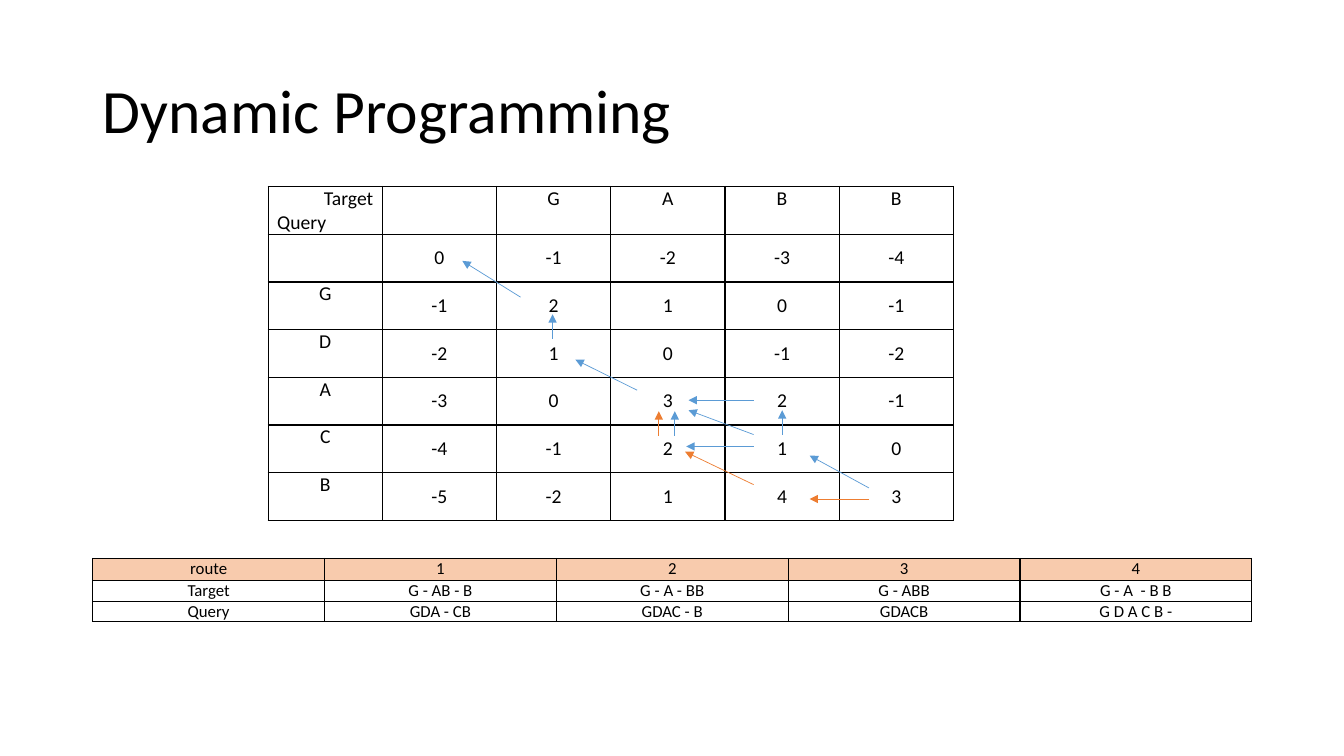
from lxml import etree
from pptx import Presentation
from pptx.dml.color import RGBColor
from pptx.enum.shapes import MSO_CONNECTOR
from pptx.enum.text import MSO_ANCHOR, PP_ALIGN
from pptx.oxml.ns import qn
from pptx.util import Inches, Pt

LEFT, CENTER, RIGHT = PP_ALIGN.LEFT, PP_ALIGN.CENTER, PP_ALIGN.RIGHT
TOP, MIDDLE = MSO_ANCHOR.TOP, MSO_ANCHOR.MIDDLE
STRAIGHT = MSO_CONNECTOR.STRAIGHT
BLACK, BLUE, ORANGE, PEACH = "000000", "5B9BD5", "ED7D31", "F8CBAD"


def rgb(value):
    return RGBColor.from_string(value)


class Deck:
    """Style and current slide; page lengths are percentages of the slide."""

    font = "Calibri"

    def __init__(self):
        self.prs = Presentation()
        self.prs.slide_width, self.prs.slide_height = Inches(13.33), Inches(7.5)
        self.s = self.prs.slides.add_slide(self.prs.slide_layouts[5])

    def x(self, share):
        return round(self.prs.slide_width * share / 100)

    def y(self, share):
        return round(self.prs.slide_height * share / 100)

    def style(self, p, size, align):
        p.alignment = align
        p.font.name, p.font.size = self.font, Pt(size)
        p.font.color.rgb = rgb(BLACK)

    def title(self, text, left, top, width, height):
        sp = self.s.shapes.title
        sp.left, sp.top = self.x(left), self.y(top)
        sp.width, sp.height = self.x(width), self.y(height)
        tf = sp.text_frame
        tf.text, tf.vertical_anchor = text, MIDDLE
        p = tf.paragraphs[0]
        self.style(p, 44, LEFT)
        p.line_spacing = 0.9

    def border(self, cell):
        tcPr = cell._tc.get_or_add_tcPr()
        for i, side in enumerate(("a:lnL", "a:lnR", "a:lnT", "a:lnB")):
            ln = etree.Element(qn(side), w=str(Pt(1)))
            fill = etree.SubElement(ln, qn("a:solidFill"))
            etree.SubElement(fill, qn("a:srgbClr"), val=BLACK)
            tcPr.insert(i, ln)

    def table(self, rows, left, top, width, heights, size, inset):
        frame = self.s.shapes.add_table(
            len(rows), len(rows[0]), self.x(left), self.y(top),
            self.x(width), self.y(sum(heights)))
        table = frame.table
        table.first_row = table.horz_banding = False
        for row, height in zip(table.rows, heights):
            row.height = self.y(height)
        for r, row in enumerate(rows):
            for c, text in enumerate(row):
                cell = table.cell(r, c)
                cell.margin_left = cell.margin_right = Inches(inset)
                cell.margin_top = cell.margin_bottom = 0
                cell.vertical_anchor = MIDDLE if r and c else TOP
                self.border(cell)
                cell.fill.background()
                cell.text_frame.text = text
                for p in cell.text_frame.paragraphs:
                    self.style(p, size, CENTER)
        return frame

    def arrow(self, frame, color, start, end):
        """Draw an arrow between (column, row) points of a table's grid."""
        cols, rows = len(frame.table.columns), len(frame.table.rows)
        points = [(round(frame.left + frame.width * c / cols),
                   round(frame.top + frame.height * r / rows))
                  for c, r in (start, end)]
        line = self.s.shapes.add_connector(STRAIGHT, *points[0], *points[1])
        line.line.color.rgb, line.line.width = rgb(color), Pt(0.5)
        spPr = line._element.spPr
        etree.SubElement(spPr.find(qn("a:ln")), qn("a:tailEnd"), type="triangle")
        etree.SubElement(spPr, qn("a:effectLst"))


def main():
    deck = Deck()
    deck.title("Dynamic Programming", 6.9, 5.33, 86.25, 19.33)

    # Alignment routes
    routes = [
        ["route", "1", "2", "3", "4"],
        ["Target", "G - AB - B", "G - A - BB", "G - ABB", "G - A  - B B"],
        ["Query", "GDA - CB", "GDAC - B", "GDACB", "G D A C B -"],
    ]
    frame = deck.table(routes, 6.9, 73.87, 86.25, [2.93, 2.67, 2.67], 12, 0.07)
    for cell in frame.table.rows[0].cells:
        cell.fill.solid()
        cell.fill.fore_color.rgb = rgb(PEACH)

    # Score matrix
    scores = [
        ["Target\nQuery", "", "G", "A", "B", "B"],
        ["", "0", "-1", "-2", "-3", "-4"],
        ["G", "-1", "2", "1", "0", "-1"],
        ["D", "-2", "1", "0", "-1", "-2"],
        ["A", "-3", "0", "3", "2", "-1"],
        ["C", "-4", "-1", "2", "1", "0"],
        ["B", "-5", "-2", "1", "4", "3"],
    ]
    matrix = deck.table(scores, 19.95, 24.67, 51, [6.31] * len(scores), 14, 0.09)
    target, query = matrix.table.cell(0, 0).text_frame.paragraphs
    target.alignment, query.alignment = RIGHT, LEFT

    # Traceback arrows, in columns and rows of the matrix
    for color, start, end in [
        (ORANGE, (5.26, 6.55), (4.74, 6.55)),
        (BLUE, (5.26, 6.32), (4.74, 5.64)),
        (BLUE, (4.5, 5.2), (4.5, 4.69)),
        (BLUE, (4.25, 5.45), (3.66, 5.45)),
        (BLUE, (4.25, 5.2), (3.68, 4.69)),
        (BLUE, (4.25, 4.48), (3.68, 4.48)),
        (BLUE, (3.23, 4.27), (2.69, 3.63)),
        (BLUE, (2.49, 3.19), (2.49, 2.68)),
        (BLUE, (2.21, 2.32), (1.7, 1.56)),
        (ORANGE, (4.25, 6.25), (3.65, 5.56)),
        (BLUE, (3.56, 5.22), (3.56, 4.71)),
        (ORANGE, (3.42, 5.22), (3.42, 4.71)),
    ]:
        deck.arrow(matrix, color, start, end)

    deck.prs.save("out.pptx")


if __name__ == "__main__":
    main()
